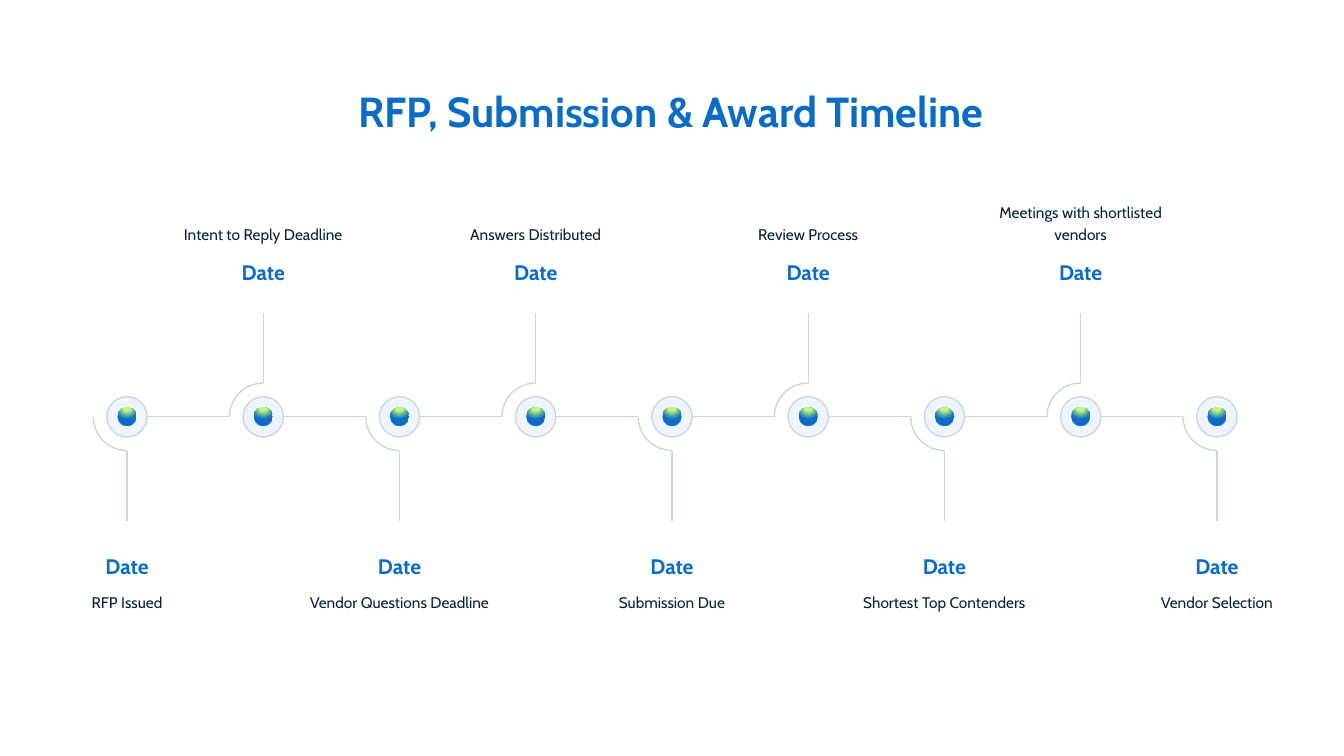
from lxml import etree
from pptx import Presentation
from pptx.dml.color import RGBColor
from pptx.enum import shapes, text
from pptx.oxml.ns import qn
from pptx.util import Inches, Pt

COLORS = {"blue": "0B6CC6", "ink": "06223B", "line": "CFD4DC",
          "halo": "EEF4FE", "lime": "C1F87C"}
FONT = "Cabin"
HALO, CORE, ARC = 0.4, 0.19, 0.67
LABEL_W, LABEL_H, LINE_H = 2.3, 0.31, 0.22
DATE_W, DATE_H = 0.66, 0.35

# label, label width, label lines
MILESTONES = [
    ("RFP Issued", LABEL_W, 1),
    ("Intent to Reply Deadline", LABEL_W, 1),
    ("Vendor Questions Deadline", LABEL_W, 1),
    ("Answers Distributed", LABEL_W, 1),
    ("Submission Due", LABEL_W, 1),
    ("Review Process", LABEL_W, 1),
    ("Shortest Top Contenders", LABEL_W, 1),
    ("Meetings with shortlisted vendors", 2.03, 2),
    ("Vendor Selection", LABEL_W, 1),
]


def rgb(name):
    return RGBColor.from_string(COLORS[name])


def write(tf, content, size=11, color="ink", bold=False, spacing=None,
          anchor="TOP", wrap=True):
    tf.word_wrap = wrap
    tf.auto_size = text.MSO_AUTO_SIZE.SHAPE_TO_FIT_TEXT
    tf.vertical_anchor = text.MSO_ANCHOR[anchor]
    p = tf.paragraphs[0]
    p.alignment = text.PP_ALIGN.CENTER
    if spacing:
        p.line_spacing = Pt(spacing)
    r = p.add_run()
    r.text = content
    r.font.name, r.font.size, r.font.bold = FONT, Pt(size), bold
    r.font.color.rgb = rgb(color)


def add_textbox(s, cx, top, width, height, content, **fmt):
    box = s.shapes.add_textbox(Inches(cx - width / 2), Inches(top),
                               Inches(width), Inches(height))
    write(box.text_frame, content, **fmt)


def add_centred(s, kind, cx, cy, size):
    sp = s.shapes.add_shape(kind, Inches(cx - size / 2), Inches(cy - size / 2),
                            Inches(size), Inches(size))
    sp.shadow.inherit = False
    return sp


def outline(sp):
    sp.line.color.rgb = rgb("line")
    sp.line.width = Pt(1)


def add_line(s, x1, y1, x2, y2):
    line = s.shapes.add_connector(shapes.MSO_CONNECTOR.STRAIGHT, Inches(x1),
                                  Inches(y1), Inches(x2), Inches(y2))
    outline(line)
    etree.SubElement(line._element.spPr, qn("a:effectLst"))


def fill_glow(sp):
    """Radial gradient centred above the shape."""
    sp.fill.gradient()
    for stop, (pos, color) in zip(sp.fill.gradient_stops,
                                  [(0.27, "lime"), (0.89, "blue")]):
        stop.position, stop.color.rgb = pos, rgb(color)
    grad = sp._element.spPr.find(qn("a:gradFill"))
    grad.remove(grad.find(qn("a:lin")))
    radial = etree.SubElement(grad, qn("a:path"), {"path": "circle"})
    etree.SubElement(radial, qn("a:fillToRect"),
                     {"l": "50000", "t": "-80000", "r": "50000", "b": "180000"})


def add_dot(s, cx, cy):
    halo = add_centred(s, shapes.MSO_SHAPE.OVAL, cx, cy, HALO)
    halo.fill.solid()
    halo.fill.fore_color.rgb = rgb("halo")
    outline(halo)
    core = add_centred(s, shapes.MSO_SHAPE.OVAL, cx, cy, CORE)
    fill_glow(core)
    core.line.fill.background()


def add_arc(s, cx, cy, above):
    arc = add_centred(s, shapes.MSO_SHAPE.ARC, cx, cy, ARC)
    arc.fill.background()
    outline(arc)
    xfrm = arc._element.spPr.find(qn("a:xfrm"))
    xfrm.set("flipH", "1")
    if not above:
        xfrm.set("flipV", "1")


def add_milestone(s, cx, top, height, above, label, width, lines):
    cy = top + height / 2
    side = -1 if above else 1
    label_h = LABEL_H + (lines - 1) * LINE_H
    add_arc(s, cx, cy, above)
    add_line(s, cx, cy + side * 1.03, cx, cy + side * ARC / 2)
    add_dot(s, cx, cy)
    date_top = top + 0.36 if above else top + height - 0.67
    label_top = top + LABEL_H - label_h if above else top + height - LABEL_H
    add_textbox(s, cx, date_top, DATE_W, DATE_H, "Date", size=15,
                color="blue", bold=True, anchor="MIDDLE", wrap=False)
    add_textbox(s, cx, label_top, width, label_h, label, spacing=16,
                anchor="BOTTOM" if above else "TOP")


def add_timeline(s, left, top, width, height):
    """Milestones alternate below and above an axis through the box's middle."""
    step = width / (len(MILESTONES) - 1)
    cy = top + height / 2
    for i, milestone in enumerate(MILESTONES):
        cx = left + i * step
        if i:
            add_line(s, cx - step + HALO / 2, cy, cx - ARC / 2, cy)
        add_milestone(s, cx, top, height, i % 2 == 1, *milestone)


def add_title(s, left, top, width, height):
    title = s.shapes.title
    title.left, title.top = Inches(left), Inches(top)
    title.width, title.height = Inches(width), Inches(height)
    write(title.text_frame, "RFP, Submission & Award Timeline", size=30,
          color="blue", bold=True)


def main():
    prs = Presentation()
    prs.slide_width, prs.slide_height = Inches(13.33), Inches(7.5)
    s = prs.slides.add_slide(prs.slide_layouts[5])
    add_title(s, 1.69, 0.8, 9.93, 0.61)
    add_timeline(s, 1.26, 2.16, 10.81, 3.91 + 0.04)
    prs.save("out.pptx")


if __name__ == "__main__":
    main()
